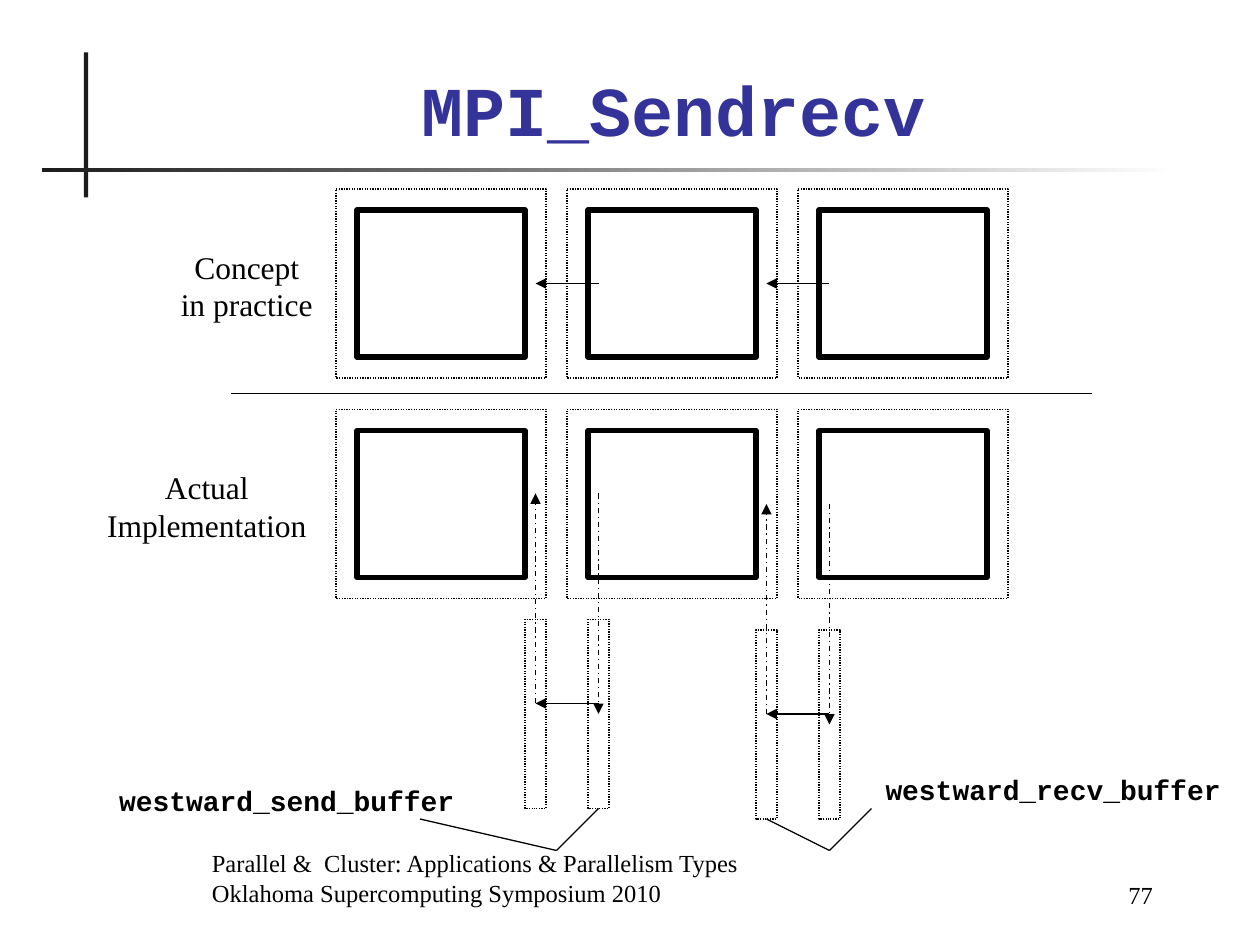
from lxml.etree import SubElement
from pptx import Presentation
from pptx.dml.color import RGBColor
from pptx.enum.dml import MSO_LINE
from pptx.enum.shapes import MSO_CONNECTOR, MSO_SHAPE
from pptx.enum.text import MSO_ANCHOR, MSO_AUTO_SIZE, PP_ALIGN
from pptx.oxml.ns import qn
from pptx.util import Cm, Pt

COLORS = {"ink": "000000", "rule": "1C1C1C", "paper": "FFFFFF", "title": "333399"}
SERIF = "Times New Roman"
MONO = "Courier New"
CELLS_PER_INCH = 12
COLUMN_STEP = 22
BOTTOM = 2


def grid(cells):
    return Cm(cells * 2.54 / CELLS_PER_INCH)


def color(name):
    return RGBColor.from_string(COLORS[name])


def add_rectangle(slide, left, top, width, height):
    shape = slide.shapes.add_shape(
        MSO_SHAPE.RECTANGLE, grid(left), grid(top), grid(width), grid(height))
    shape.shadow.inherit = False
    return shape


def add_outline(slide, left, top, width, height, weight=0.75, dash=None):
    shape = add_rectangle(slide, left, top, width, height)
    shape.fill.background()
    shape.line.color.rgb = color("ink")
    shape.line.width = Pt(weight)
    if dash is not None:
        shape.line.dash_style = dash
    return shape


def add_line(slide, start, end, dash=None, arrow=False):
    connector = slide.shapes.add_connector(
        MSO_CONNECTOR.STRAIGHT, *(grid(cells) for cells in (*start, *end)))
    connector.line.color.rgb = color("ink")
    connector.line.width = Pt(0.75)
    if dash is not None:
        connector.line.dash_style = dash
    if arrow:
        SubElement(connector.line._get_or_add_ln(), qn("a:tailEnd"), type="triangle")
    SubElement(connector._element.spPr, qn("a:effectLst"))
    return connector


def add_text(slide, lines, left, top, width, height, size, font=SERIF, bold=False,
             align=PP_ALIGN.CENTER, anchor=MSO_ANCHOR.TOP, wrap=True, ink="ink"):
    box = slide.shapes.add_textbox(grid(left), grid(top), grid(width), grid(height))
    frame = box.text_frame
    frame.word_wrap = wrap
    frame.auto_size = MSO_AUTO_SIZE.NONE if wrap else MSO_AUTO_SIZE.SHAPE_TO_FIT_TEXT
    frame.vertical_anchor = anchor
    frame.text = "\n".join(lines)
    for paragraph in frame.paragraphs:
        paragraph.alignment = align
        paragraph.font.name = font
        paragraph.font.size = Pt(size)
        paragraph.font.bold = bold
        paragraph.font.color.rgb = color(ink)


def add_title_rules(slide):
    vertical = add_rectangle(slide, 8, 5, 0.4, 13.8)
    vertical.fill.solid()
    vertical.fill.fore_color.rgb = color("rule")
    horizontal = add_rectangle(slide, 4, 16, 108, 0.4)
    horizontal.fill.gradient()
    horizontal.fill.gradient_angle = 0
    for stop, name in zip(horizontal.fill.gradient_stops, ("rule", "paper")):
        stop.color.rgb = color(name)
    for shape in (vertical, horizontal):
        shape.line.fill.background()


def add_process_row(slide, top):
    for column in range(3):
        left = 32 + column * COLUMN_STEP
        add_outline(slide, left + 2, top + 2, 16, 14, weight=3)
        add_outline(slide, left, top, 20, 18, dash=MSO_LINE.ROUND_DOT)


def add_buffer_exchange(slide, left, top):
    receive_x, send_x = left + 1, left + 7
    receive_buffer, send_buffer = (
        add_outline(slide, x - 1, top, 2, 18, dash=MSO_LINE.ROUND_DOT)
        for x in (receive_x, send_x))
    message_y = top + 8
    add_line(slide, (receive_x, message_y), (receive_x, top - 12),
             MSO_LINE.DASH_DOT, arrow=True)
    add_line(slide, (send_x, top - 12), (send_x, message_y + 1),
             MSO_LINE.DASH_DOT, arrow=True)
    add_line(slide, (send_x, message_y), (receive_x, message_y), arrow=True)
    return receive_buffer, send_buffer


def add_callout(slide, buffer, buffer_end, elbow, label_end):
    add_line(slide, buffer_end, elbow).begin_connect(buffer, BOTTOM)
    add_line(slide, label_end, elbow)


def main():
    presentation = Presentation()
    presentation.slide_width = Cm(25.4)
    presentation.slide_height = Cm(19.05)
    slide = presentation.slides.add_slide(presentation.slide_layouts[6])

    add_title_rules(slide)
    add_text(slide, ["MPI_Sendrecv"], 13, 6, 102.2, 8.9, 40, MONO, bold=True,
             anchor=MSO_ANCHOR.BOTTOM, ink="title")

    add_process_row(slide, 18)
    for column in range(2):
        x = 51 + column * COLUMN_STEP
        add_line(slide, (x + 6, 27), (x, 27), arrow=True)
    add_line(slide, (22, 37.5), (104, 37.5))
    add_process_row(slide, 39)
    add_text(slide, ["Concept", "in practice"], 16, 23, 15, 8.4, 18, wrap=False)
    add_text(slide, ["Actual", "Implementation"], 9, 44, 21.4, 8.4, 18, wrap=False)

    _, send_buffer = add_buffer_exchange(slide, 50, 59)
    receive_buffer, _ = add_buffer_exchange(slide, 50 + COLUMN_STEP, 60)
    add_callout(slide, send_buffer, (57, 77), (53, 81), (40, 78))
    add_callout(slide, receive_buffer, (73, 78), (79, 81), (83, 77))
    for label, left, top in (("westward_send_buffer", 10, 74),
                             ("westward_recv_buffer", 83, 73)):
        add_text(slide, [label], left, top, 34.6, 4.4, 16, MONO, bold=True, wrap=False)

    add_text(slide, ["Parallel &  Cluster: Applications & Parallelism Types",
                     "Oklahoma Supercomputing Symposium 2010"],
             19, 81, 73, 6, 14, align=PP_ALIGN.LEFT, anchor=MSO_ANCHOR.BOTTOM)
    add_text(slide, ["77"], 94, 81.2, 17, 6, 14,
             align=PP_ALIGN.RIGHT, anchor=MSO_ANCHOR.BOTTOM)
    presentation.save("out.pptx")


if __name__ == "__main__":
    main()
